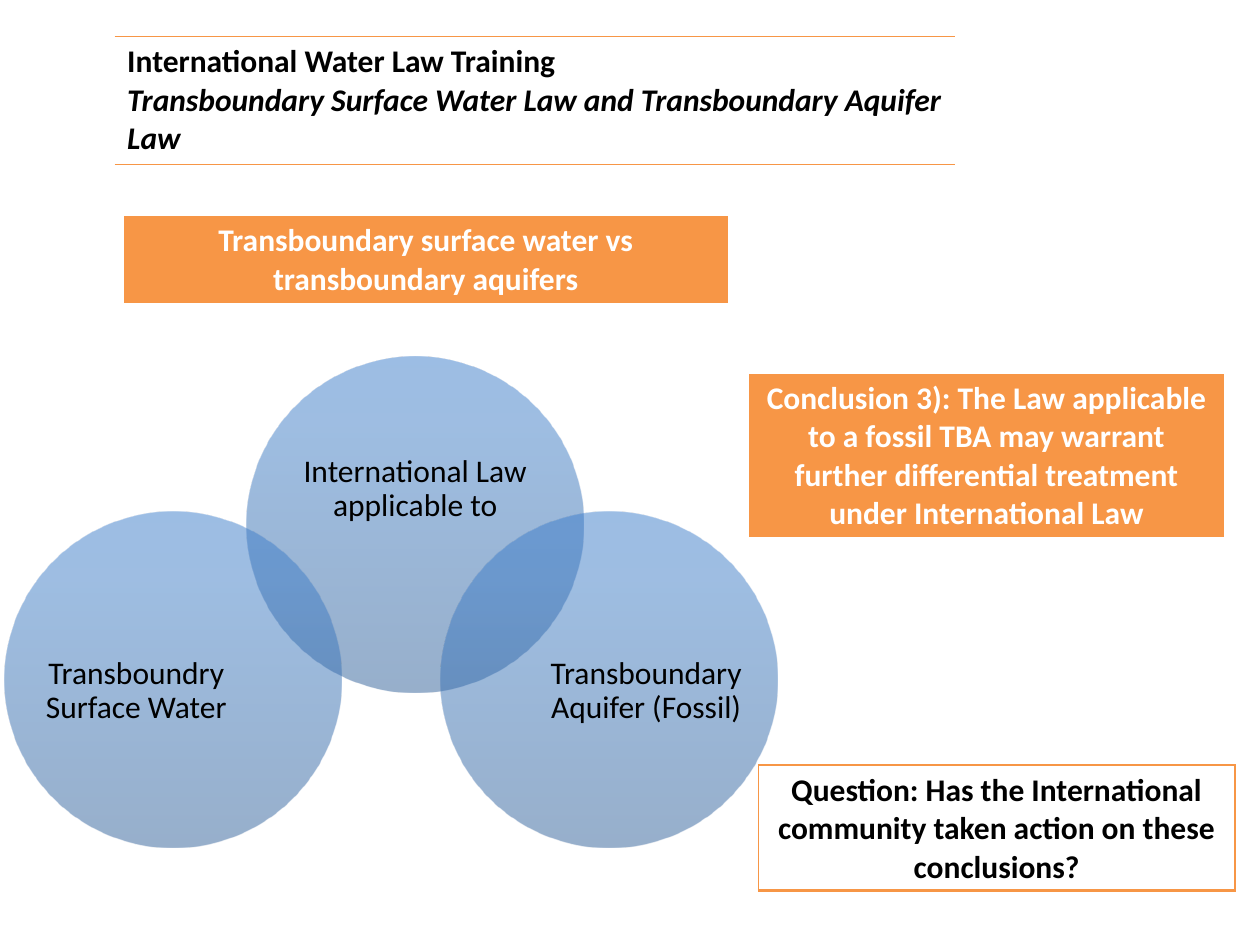
from dataclasses import dataclass

from lxml.etree import SubElement
from pptx import Presentation
from pptx.dml.color import RGBColor
from pptx.enum.shapes import MSO_SHAPE as Shape
from pptx.enum.text import MSO_ANCHOR as Anchor, PP_ALIGN as Align
from pptx.oxml import parse_xml
from pptx.oxml.ns import nsdecls, qn
from pptx.util import Inches, Pt

UNIT = Inches(0.1)  # the slide is a grid of 100 columns by 75 rows
COLUMNS, ROWS = 100, 75


@dataclass(frozen=True)
class Theme:
    font: str = "Calibri"
    size: int = 18
    ink: str = "000000"
    paper: str = "FFFFFF"
    accent: str = "F79646"
    circle_stops: tuple = ((0, "2F5F99"), (80, "3D7CC7"), (100, "3A7CCB"))
    circle_alpha: int = 50


@dataclass(frozen=True)
class Box:
    left: float
    top: float
    width: float
    height: float

    def lengths(self):
        return [round(n * UNIT) for n in (self.left, self.top, self.width, self.height)]

    def share(self, left, top, width, height):
        """Return the box that covers the given shares of this one."""
        return Box(self.left + left * self.width, self.top + top * self.height,
                   width * self.width, height * self.height)


THEME = Theme()


def write(paragraph, text, color=THEME.ink, bold=False, italic=False, align=Align.LEFT):
    paragraph.alignment = align
    run = paragraph.add_run()
    run.text = text
    font = run.font
    font.name, font.size = THEME.font, Pt(THEME.size)
    font.bold, font.italic = bold, italic
    font.color.rgb = RGBColor.from_string(color)


def set_borders(cell, color, widths):
    """Draw the cell's sides, given as a dict of side letter to points."""
    properties = cell._tc.get_or_add_tcPr()
    for side in "LRTB":
        line = SubElement(properties, qn(f"a:ln{side}"), w=str(Pt(widths.get(side, 0))))
        if side in widths:
            fill = SubElement(line, qn("a:solidFill"))
            SubElement(fill, qn("a:srgbClr"), val=color)
        else:
            SubElement(line, qn("a:noFill"))


def add_panel(slide, box, lines, border, widths, fill=None, color=THEME.ink, align=Align.CENTER):
    """Add a one-cell table; lines holds pairs of text and italic."""
    table = slide.shapes.add_table(1, 1, *box.lengths()).table
    table.first_row = table.horz_banding = False
    cell = table.cell(0, 0)
    set_borders(cell, border, widths)
    if fill:
        cell.fill.solid()
        cell.fill.fore_color.rgb = RGBColor.from_string(fill)
    else:
        cell.fill.background()
    frame = cell.text_frame
    for index, (text, italic) in enumerate(lines):
        paragraph = frame.add_paragraph() if index else frame.paragraphs[0]
        write(paragraph, text, color=color, bold=True, italic=italic, align=align)


def add_heading(slide, box):
    add_panel(slide, box, [
        ("International Water Law Training", False),
        ("Transboundary Surface Water Law and Transboundary Aquifer Law", True),
    ], THEME.accent, {"T": 1, "B": 1}, align=Align.LEFT)


def add_banner(slide, box, text):
    add_panel(slide, box, [(text, False)], THEME.paper, {"L": 1, "R": 1, "T": 1, "B": 3},
              fill=THEME.accent, color=THEME.paper)


def add_question(slide, box, text):
    add_panel(slide, box, [(text, False)], THEME.accent, {"L": 1, "R": 1, "T": 1, "B": 2})


def fill_circle(circle):
    """Give the circle its translucent gradient, running upwards."""
    stops = "".join(
        f'<a:gs pos="{position * 1000}"><a:srgbClr val="{color}">'
        f'<a:alpha val="{THEME.circle_alpha * 1000}"/></a:srgbClr></a:gs>'
        for position, color in THEME.circle_stops)
    gradient = parse_xml(
        f'<a:gradFill {nsdecls("a")} rotWithShape="1"><a:gsLst>{stops}</a:gsLst>'
        '<a:lin ang="16200000" scaled="0"/></a:gradFill>')
    circle.fill.background()
    old_fill = circle._element.spPr.find(qn("a:noFill"))
    old_fill.getparent().replace(old_fill, gradient)


def add_circle(group, box, text, label_shares):
    circle = group.shapes.add_shape(Shape.OVAL, *box.lengths())
    circle.shadow.inherit = False
    fill_circle(circle)
    circle.line.fill.background()

    label = group.shapes.add_textbox(*box.share(*label_shares).lengths())
    frame = label.text_frame
    frame.word_wrap = True
    frame.vertical_anchor = Anchor.MIDDLE
    frame.margin_left = frame.margin_right = frame.margin_top = frame.margin_bottom = 0
    paragraph = frame.paragraphs[0]
    paragraph.line_spacing = 0.9
    paragraph.space_after = Pt(0.35 * THEME.size)
    write(paragraph, text, align=Align.CENTER)


def add_venn(slide, box):
    """Place three overlapping circles, one above and two below."""
    size = 26.7
    right, bottom = box.left + box.width - size, box.top + box.height - size
    label_width, label_height = 0.6, 0.55
    circles = [
        (box.left + 19.2, box.top, "International Law applicable to",
         (0.13, 0.17, 0.74, 0.45)),
        (right, bottom, "Transboundary Aquifer (Fossil)",
         (0.31, 0.26, label_width, label_height)),
        (box.left, bottom, "Transboundry Surface Water",
         (0.09, 0.26, label_width, label_height)),
    ]
    group = slide.shapes.add_group_shape()
    for left, top, text, label_shares in circles:
        add_circle(group, Box(left, top, size, size), text, label_shares)


def main():
    presentation = Presentation()
    presentation.slide_width, presentation.slide_height = COLUMNS * UNIT, ROWS * UNIT
    slide = presentation.slides.add_slide(presentation.slide_layouts[6])

    # Heading and topic
    add_heading(slide, Box(9.1, 2.9, 66.7, 10))
    add_banner(slide, Box(9.8, 17.1, 48, 7),
               "Transboundary surface water vs transboundary aquifers")

    # Conclusion beside the diagram
    add_banner(slide, Box(59.4, 29.6, 37.8, 13),
               "Conclusion 3): The Law applicable to a fossil TBA may warrant "
               "further differential treatment under International Law")
    add_venn(slide, Box(0.4, 28.3, 61.3, 39))

    # Closing question
    add_question(slide, Box(60.2, 60.7, 37.8, 10),
                 "Question: Has the International community taken action on these conclusions?")

    presentation.save("out.pptx")


if __name__ == "__main__":
    main()
